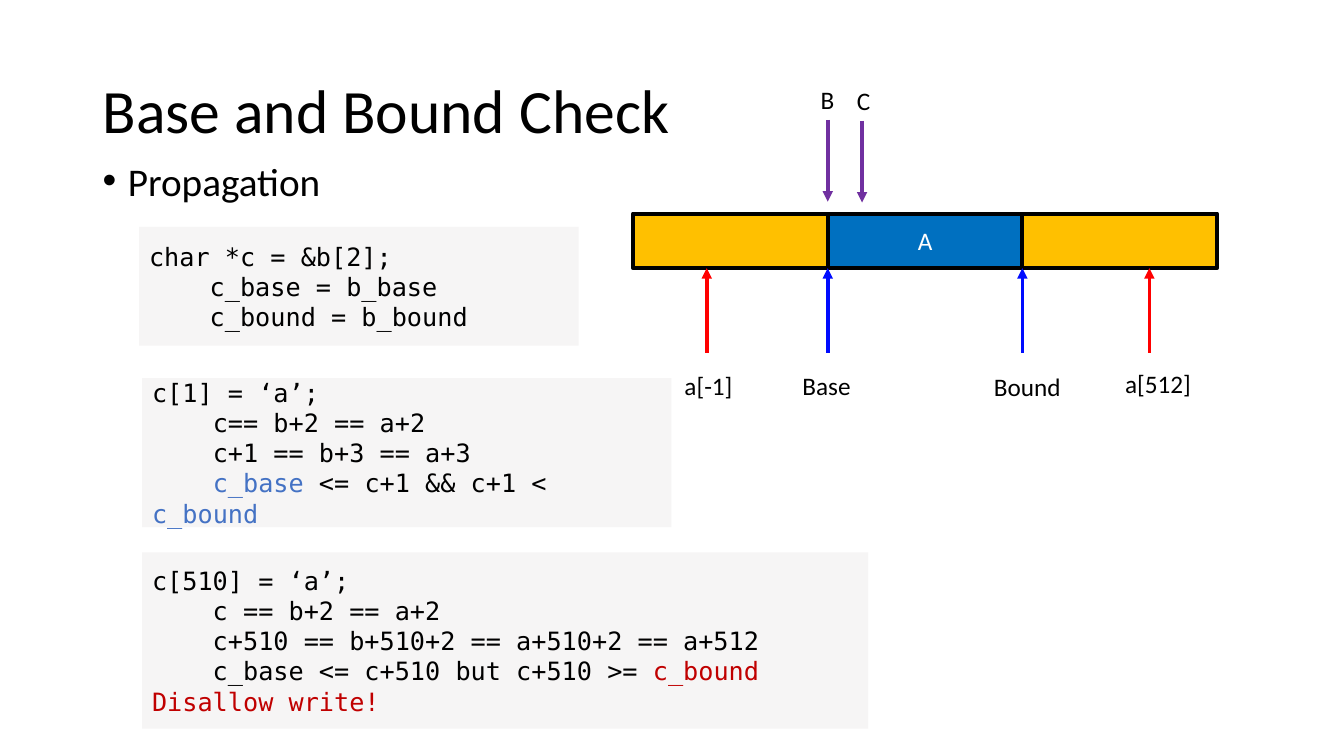
from dataclasses import dataclass

from pptx import Presentation
from pptx.dml import color as dml
from pptx.enum import shapes, text
from pptx.oxml import ns, xmlchemy
from pptx.util import Inches, Pt

HUES = {
    "black": "000000", "white": "FFFFFF", "gray": "E7E6E6",
    "gold": "FFC000", "blue": "0070C0", "pale": "4472C4",
    "dark": "C00000", "bound": "000CFF", "red": "FF0000",
    "violet": "7030A0",
}
SANS, MONO = "Calibri", "DejaVu Sans Mono"

# Memory bar: three equal cells
LEFT, TOP, CELL, HIGH = 6.28, 2.12, 1.93, 0.54
BASE, BOUND = LEFT + CELL, LEFT + 2 * CELL


@dataclass
class Code:
    left: float
    top: float
    width: float
    height: float
    lines: list[list[tuple[str, str]]]


@dataclass
class Arrow:
    x: float
    start: float
    end: float
    hue: str


@dataclass
class Label:
    words: str
    left: float
    top: float
    width: float


def plain(*lines: str) -> list[list[tuple[str, str]]]:
    return [[(line, "black")] for line in lines]


CODES = [
    Code(1.41, 3.75, 5.25, 1.48, plain(
        "c[1] = ‘a’;",
        "    c== b+2 == a+2",
        "    c+1 == b+3 == a+3",
    ) + [[("    ", "black"), ("c_base ", "pale"),
          ("<= c+1 && c+1 < ", "black"), ("c_bound", "pale")]]),
    Code(1.38, 2.25, 4.36, 1.18, plain(
        "char *c = &b[2];",
        "    c_base = b_base",
        "    c_bound = b_bound",
    )),
    Code(1.41, 5.48, 7.2, 1.75, plain(
        "c[510] = ‘a’;",
        "    c == b+2 == a+2",
        "    c+510 == b+510+2 == a+510+2 == a+512",
    ) + [[("    c_base <= c+510 but c+510 >= ", "black"),
          ("c_bound", "dark")],
         [("Disallow write!", "dark")]]),
]

CELLS = [("", "gold"), ("A", "blue"), ("", "gold")]

ARROWS = [Arrow(x, 3.5, TOP + HIGH, hue) for x, hue in (
    (BASE, "bound"), (BOUND, "bound"), (7.01, "red"), (11.4, "red"))]
ARROWS += [Arrow(BASE, 1.19, 2, "violet"), Arrow(8.55, 1.2, 2.01, "violet")]

LABELS = [
    Label("Base", 7.86, 3.62, 0.68), Label("Bound", 9.76, 3.63, 0.87),
    Label("a[-1]", 6.69, 3.62, 0.68), Label("a[512]", 11.06, 3.61, 0.86),
    Label("B", 8.04, 0.79, 0.34), Label("C", 8.4, 0.8, 0.34),
]


def rgb(hue: str) -> dml.RGBColor:
    return dml.RGBColor.from_string(HUES[hue])


def style(font, size: float, face: str, hue: str) -> None:
    font.size, font.name = Pt(size), face
    font.color.rgb = rgb(hue)


def add_sub(parent, tag: str, **attrs: str):
    node = xmlchemy.OxmlElement(tag)
    for key, value in attrs.items():
        node.set(key, value)
    parent.append(node)
    return node


def add_rect(slide, left: float, top: float, width: float, height: float,
             hue: str):
    rect = slide.shapes.add_shape(
        shapes.MSO_SHAPE.RECTANGLE, Inches(left), Inches(top),
        Inches(width), Inches(height))
    rect.shadow.inherit = False
    rect.fill.solid()
    rect.fill.fore_color.rgb = rgb(hue)
    rect.text_frame.vertical_anchor = text.MSO_ANCHOR.MIDDLE
    return rect


def add_text(slide, words: str, left: float, top: float, width: float,
             height: float, size: float, wrap: bool = True):
    box = slide.shapes.add_textbox(
        Inches(left), Inches(top), Inches(width), Inches(height))
    frame = box.text_frame
    frame.word_wrap = wrap
    frame.text = words
    style(frame.paragraphs[0].runs[0].font, size, SANS, "black")
    return frame


def add_code(slide, code: Code) -> None:
    rect = add_rect(slide, code.left, code.top, code.width, code.height,
                    "gray")
    rect.line.fill.background()
    tint = next(rect._element.spPr.iter(ns.qn("a:srgbClr")))
    add_sub(tint, "a:alpha", val="37000")
    frame = rect.text_frame
    frame.text = "\n".join("" for _ in code.lines)
    for para, line in zip(frame.paragraphs, code.lines):
        para.alignment = text.PP_ALIGN.LEFT
        for words, hue in line:
            run = para.add_run()
            run.text = words
            style(run.font, 18, MONO, hue)


def add_arrow(slide, arrow: Arrow) -> None:
    line = slide.shapes.add_connector(
        shapes.MSO_CONNECTOR.STRAIGHT, Inches(arrow.x), Inches(arrow.start),
        Inches(arrow.x), Inches(arrow.end))
    line.line.color.rgb = rgb(arrow.hue)
    line.line.width = Pt(2.5)
    add_sub(line.line._get_or_add_ln(), "a:tailEnd", type="triangle")
    add_sub(line._element.spPr, "a:effectLst")


def main() -> None:
    deck = Presentation()
    deck.slide_width, deck.slide_height = Inches(13.33), Inches(7.5)
    slide = deck.slides.add_slide(deck.slide_layouts[6])

    # Code panels
    for code in CODES:
        add_code(slide, code)

    # Title and bullet
    title = add_text(slide, "Base and Bound Check", 0.92, 0.4, 11.5, 1.45, 44)
    title.vertical_anchor = text.MSO_ANCHOR.MIDDLE
    title.paragraphs[0].line_spacing = 0.9
    body = add_text(slide, "Propagation", 0.92, 1.6, 11.5, 0.5, 28)
    point = body.paragraphs[0]
    point.line_spacing = 0.8
    props = point._p.get_or_add_pPr()
    props.set("marL", str(Inches(0.25)))
    props.set("indent", str(Inches(-0.25)))
    add_sub(props, "a:buFont", typeface="Arial")
    add_sub(props, "a:buChar", char="•")

    # Memory bar
    for i, (name, hue) in enumerate(CELLS):
        cell = add_rect(slide, LEFT + i * CELL, TOP, CELL, HIGH, hue)
        cell.line.color.rgb = rgb("black")
        cell.line.width = Pt(3)
        if name:
            cell.text_frame.text = name
            para = cell.text_frame.paragraphs[0]
            para.alignment = text.PP_ALIGN.CENTER
            style(para.runs[0].font, 18, SANS, "white")

    # Pointers and their labels
    for arrow in ARROWS:
        add_arrow(slide, arrow)
    for label in LABELS:
        frame = add_text(slide, label.words, label.left, label.top,
                         label.width, 0.4, 18, wrap=False)
        frame.auto_size = text.MSO_AUTO_SIZE.SHAPE_TO_FIT_TEXT

    deck.save("out.pptx")


if __name__ == "__main__":
    main()
